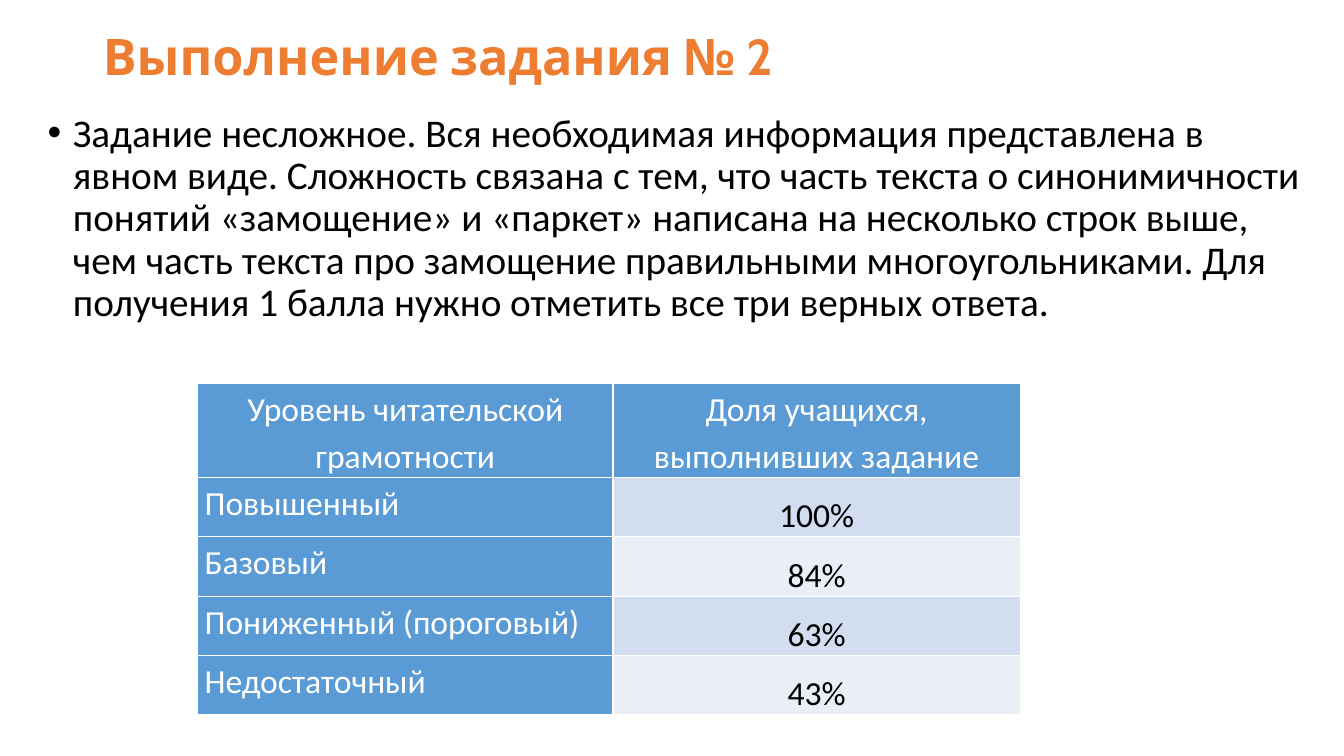
from lxml.etree import SubElement
from pptx import Presentation
from pptx.dml.color import RGBColor
from pptx.enum.text import MSO_ANCHOR as Anchor, MSO_AUTO_SIZE as AutoSize, PP_ALIGN as Align
from pptx.oxml.ns import qn
from pptx.util import Inches, Pt

# Slide size and palette
WIDTH, HEIGHT = Inches(13.33), Inches(7.5)
ORANGE = RGBColor(0xED, 0x7D, 0x31)
BLUE = RGBColor(0x5B, 0x9B, 0xD5)
BAND_DARK = RGBColor(0xD2, 0xDE, 0xEF)
BAND_LIGHT = RGBColor(0xEA, 0xEF, 0xF7)
WHITE = RGBColor(0xFF, 0xFF, 0xFF)
BLACK = RGBColor(0, 0, 0)

TITLE = "Выполнение задания № 2"
BODY = (
    "Задание несложное. Вся необходимая информация представлена в явном виде. "
    "Сложность связана с тем, что часть текста о синонимичности понятий "
    "«замощение» и «паркет» написана на несколько строк выше, чем часть текста "
    "про замощение правильными многоугольниками. Для получения 1 балла нужно "
    "отметить все три верных ответа."
)
HEADER = ("Уровень читательской грамотности", "Доля учащихся, выполнивших задание")
RESULTS = (
    ("Повышенный", "100%"),
    ("Базовый", "84%"),
    ("Пониженный (пороговый)", "63%"),
    ("Недостаточный", "43%"),
)
COLUMN_WIDTHS = (4.12, 4.04)
ROW_HEIGHT = 0.59


def write(frame, text, *, size, color, font="Calibri", bold=False,
          align=Align.LEFT, spacing=0.9, before=0):
    para = frame.paragraphs[0]
    para.alignment = align
    para.line_spacing = spacing
    para.space_before = Pt(before)
    span = para.add_run()
    span.text = text
    span.font.name = font
    span.font.size = Pt(size)
    span.font.bold = bold
    span.font.color.rgb = color
    return para


def place(box, left, top, width, height, anchor):
    """Position a placeholder by shares of the slide's size."""
    box.left, box.width = int(WIDTH * left), int(WIDTH * width)
    box.top, box.height = int(HEIGHT * top), int(HEIGHT * height)
    frame = box.text_frame
    frame.word_wrap = True
    frame.auto_size = AutoSize.NONE
    frame.vertical_anchor = anchor
    return frame


def add_bullet(para, indent):
    props = para._p.get_or_add_pPr()
    props.set("marL", str(indent))
    props.set("indent", str(-indent))
    SubElement(props, qn("a:buFont"), typeface="Arial")
    SubElement(props, qn("a:buChar"), char="•")


def add_borders(cell, color, width):
    props = cell._tc.get_or_add_tcPr()
    for index, side in enumerate(("lnL", "lnR", "lnT", "lnB")):
        line = props.makeelement(qn(f"a:{side}"), {"w": str(Pt(width))})
        fill = SubElement(line, qn("a:solidFill"))
        SubElement(fill, qn("a:srgbClr"), val=str(color))
        props.insert(index, line)


def fill_cell(cell, text, *, fill, color, align, anchor=Anchor.TOP):
    cell.fill.solid()
    cell.fill.fore_color.rgb = fill
    cell.margin_left = cell.margin_right = Inches(0.07)
    cell.margin_top = cell.margin_bottom = 0
    cell.vertical_anchor = anchor
    write(cell.text_frame, text, size=24, color=color, align=align, spacing=1.15)
    add_borders(cell, WHITE, 1)


def add_results(page):
    rows = len(RESULTS) + 1
    grid = page.shapes.add_table(
        rows, len(HEADER), Inches(1.96), Inches(3.8),
        Inches(sum(COLUMN_WIDTHS)), Inches(ROW_HEIGHT * rows)).table
    for column, width in zip(grid.columns, COLUMN_WIDTHS):
        column.width = Inches(width)
    for column, text in enumerate(HEADER):
        fill_cell(grid.cell(0, column), text, fill=BLUE, color=WHITE, align=Align.CENTER)
    for row, (level, share) in enumerate(RESULTS, start=1):
        band = BAND_DARK if row % 2 else BAND_LIGHT
        fill_cell(grid.cell(row, 0), level, fill=BLUE, color=WHITE, align=Align.JUSTIFY)
        fill_cell(grid.cell(row, 1), share, fill=band, color=BLACK,
                  align=Align.CENTER, anchor=Anchor.BOTTOM)


def main():
    deck = Presentation()
    deck.slide_width, deck.slide_height = WIDTH, HEIGHT
    page = deck.slides.add_slide(deck.slide_layouts[1])
    title, body = page.placeholders

    # Heading
    frame = place(title, 0.069, 0.036, 0.863, 0.085, Anchor.MIDDLE)
    write(frame, TITLE, size=36, color=ORANGE, font="Cabin", bold=True)

    # Commentary
    frame = place(body, 0.028, 0.143, 0.948, 0.812, Anchor.TOP)
    para = write(frame, BODY, size=28, color=BLACK, before=10)
    add_bullet(para, Inches(0.25))

    # Results by level
    add_results(page)
    deck.save("out.pptx")


if __name__ == "__main__":
    main()
